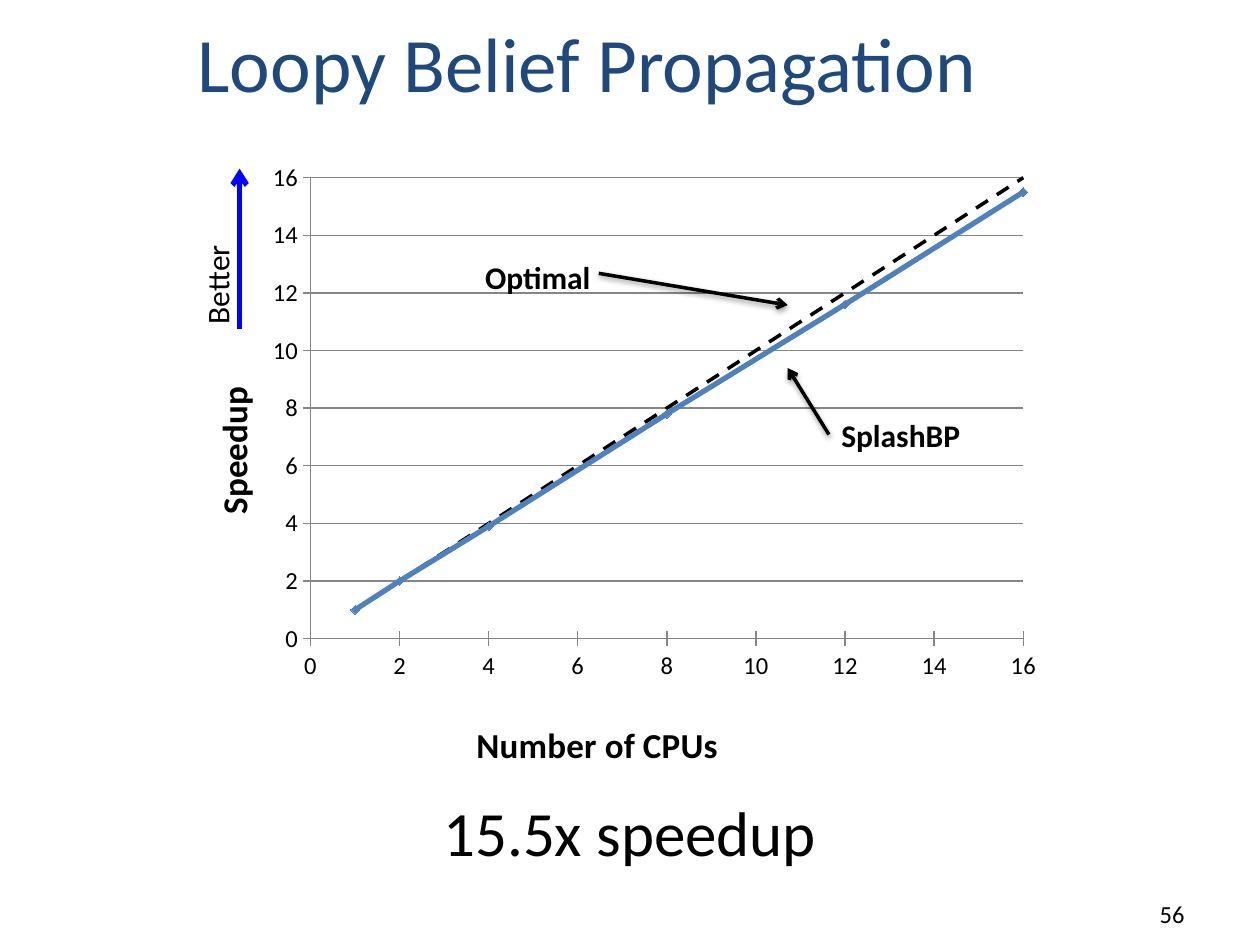
from dataclasses import dataclass

from lxml.etree import SubElement
from pptx import Presentation
from pptx.chart.data import XyChartData
from pptx.dml.color import RGBColor
from pptx.enum.chart import XL_CHART_TYPE, XL_MARKER_STYLE, XL_TICK_MARK
from pptx.enum.dml import MSO_LINE
from pptx.enum.shapes import MSO_CONNECTOR
from pptx.enum.text import MSO_ANCHOR, PP_ALIGN
from pptx.oxml import parse_xml
from pptx.oxml.ns import nsdecls, qn
from pptx.util import Cm, Pt


@dataclass(frozen=True)
class Theme:
    font: str = "Calibri"
    title: str = "1F497D"
    ink: str = "000000"
    better: str = "0000FF"
    measured: str = "4F81BD"
    grid: str = "868686"
    title_size: int = 44
    result_size: int = 36
    axis_title_size: int = 20
    label_size: int = 18
    small_size: int = 14


class SlideBuilder:
    """Hold the theme and the current slide, and add styled elements to it."""

    def __init__(self, prs, theme):
        self.theme = theme
        self.s = prs.slides.add_slide(prs.slide_layouts[5])

    def style(self, font, size, color=None, bold=False):
        font.name, font.size, font.bold = self.theme.font, Pt(size), bold
        font.color.rgb = RGBColor.from_string(color or self.theme.ink)

    def fill_text(self, sp, text, size, color=None, bold=False,
                  align=PP_ALIGN.LEFT, anchor=MSO_ANCHOR.TOP):
        tf = sp.text_frame
        tf.text, tf.word_wrap, tf.vertical_anchor = text, True, anchor
        p = tf.paragraphs[0]
        p.alignment = align
        self.style(p.runs[0].font, size, color, bold)

    def title(self, text, x, y, w, h):
        sp = self.s.shapes.title
        sp.left, sp.top, sp.width, sp.height = Cm(x), Cm(y), Cm(w), Cm(h)
        self.fill_text(sp, text, self.theme.title_size, self.theme.title,
                       anchor=MSO_ANCHOR.BOTTOM)

    def text(self, text, x, y, w, h, size, rotation=0, **options):
        sp = self.s.shapes.add_textbox(Cm(x), Cm(y), Cm(w), Cm(h))
        sp.rotation = rotation
        self.fill_text(sp, text, size, **options)
        return sp

    def arrow(self, x1, y1, x2, y2, color, width, shadow=False):
        sp = self.s.shapes.add_connector(
            MSO_CONNECTOR.STRAIGHT, Cm(x1), Cm(y1), Cm(x2), Cm(y2))
        sp.line.color.rgb, sp.line.width = RGBColor.from_string(color), Pt(width)
        SubElement(sp.line._get_or_add_ln(), qn("a:tailEnd"), type="arrow")
        effects = SubElement(sp._element.spPr, qn("a:effectLst"))
        if shadow:
            outer = SubElement(effects, qn("a:outerShdw"), blurRad="40000",
                               dist="20000", dir="5400000", rotWithShape="0")
            rgb = SubElement(outer, qn("a:srgbClr"), val=self.theme.ink)
            SubElement(rgb, qn("a:alpha"), val="38000")
        return sp

    def group(self, *shapes):
        self.s.shapes.add_group_shape(shapes)

    def place(self, element, inner=False, **fractions):
        old = element.find(qn("c:layout"))
        if old is not None:
            element.remove(old)
        layout = parse_xml(f"<c:layout {nsdecls('c')}><c:manualLayout/></c:layout>")
        settings = {"layoutTarget": "inner"} if inner else {}
        settings |= {"xMode": "edge", "yMode": "edge", **fractions}
        for name, value in settings.items():
            SubElement(layout[0], qn(f"c:{name}"), val=str(value))
        element.insert(len(element.findall(qn("c:tx"))), layout)

    def axis(self, axis, title, x, y, grid=False, rotation=0):
        axis.minimum_scale, axis.maximum_scale, axis.major_unit = 0, 16, 2
        axis.major_tick_mark = XL_TICK_MARK.CROSS
        axis.minor_tick_mark = XL_TICK_MARK.NONE
        axis.has_major_gridlines = grid
        lines = [axis.format.line]
        if grid:
            lines.append(axis.major_gridlines.format.line)
        for line in lines:
            line.color.rgb = RGBColor.from_string(self.theme.grid)
            line.width = Pt(0.75)
        self.style(axis.tick_labels.font, self.theme.small_size)
        axis.tick_labels.number_format = "General"
        axis.tick_labels.number_format_is_linked = False
        tf = axis.axis_title.text_frame
        tf.text = title
        tf._txBody.bodyPr.set("rot", str(rotation * 60000))
        self.style(tf.paragraphs[0].runs[0].font, self.theme.axis_title_size, bold=True)
        self.place(axis.axis_title._element, x=x, y=y)

    def speedup_chart(self, x, y, w, h, cpus, series):
        data = XyChartData()
        for name, values in series.items():
            points = data.add_series(name)
            for cpu, value in zip(cpus, values):
                points.add_data_point(cpu, value)
        chart = self.s.shapes.add_chart(XL_CHART_TYPE.XY_SCATTER_LINES, Cm(x), Cm(y),
                                        Cm(w), Cm(h), data).chart
        chart.has_title = chart.has_legend = False
        self.style(chart.font, self.theme.label_size)
        plot = chart.plots[0]
        plot.vary_by_categories = False
        measured, optimal = plot.series
        for line_series, color, width in ((measured, self.theme.measured, 3),
                                          (optimal, self.theme.ink, 2)):
            line_series.smooth = False
            line_series.format.line.color.rgb = RGBColor.from_string(color)
            line_series.format.line.width = Pt(width)
        optimal.format.line.dash_style = MSO_LINE.DASH
        optimal.marker.style = XL_MARKER_STYLE.NONE
        marker = measured.marker
        marker.style, marker.size = XL_MARKER_STYLE.DIAMOND, 5
        marker.format.fill.solid()
        for part in (marker.format.fill.fore_color, marker.format.line.color):
            part.rgb = RGBColor.from_string(self.theme.measured)
        self.axis(chart.category_axis, "Number of CPUs", 0.35, 0.9)
        self.axis(chart.value_axis, "Speedup", 0.06, 0.38, grid=True, rotation=-90)
        self.place(chart._chartSpace.chart.plotArea, inner=True,
                   x=0.177, y=0.065, w=0.773, h=0.718)


def main():
    prs = Presentation()
    prs.slide_width, prs.slide_height = Cm(25.4), Cm(19.05)
    t = Theme()
    b = SlideBuilder(prs, t)
    b.title("Loopy Belief Propagation", 3.73, 0.2, 20.83, 2.11)
    b.text("56", 18.85, 17.58, 5.28, 1.27, t.small_size,
           align=PP_ALIGN.RIGHT, anchor=MSO_ANCHOR.BOTTOM)
    cpus = (1, 2, 4, 8, 12, 16)
    b.speedup_chart(2.97, 2.74, 18.59, 12.95, cpus,
                    {"Series 1": (1, 2, 3.9, 7.8, 11.6, 15.5), "Series 2": cpus})
    b.group(b.text("Optimal", 9.53, 5.08, 3.48, 1.02, t.label_size, bold=True),
            b.arrow(12.07, 5.51, 15.88, 6.15, t.ink, 2, shadow=True))
    b.group(b.arrow(4.83, 6.63, 4.83, 3.4, t.better, 3),
            b.text("Better", 2.62, 4.52, 3.51, 1.02, t.label_size, rotation=270))
    b.group(b.arrow(16.71, 8.76, 15.88, 7.42, t.ink, 2, shadow=True),
            b.text("SplashBP", 16.71, 8.26, 5.26, 1.02, t.label_size, bold=True))
    b.text("15.5x speedup", 6.35, 15.88, 12.7, 1.96, t.result_size,
           align=PP_ALIGN.CENTER)
    prs.save("out.pptx")


if __name__ == "__main__":
    main()
